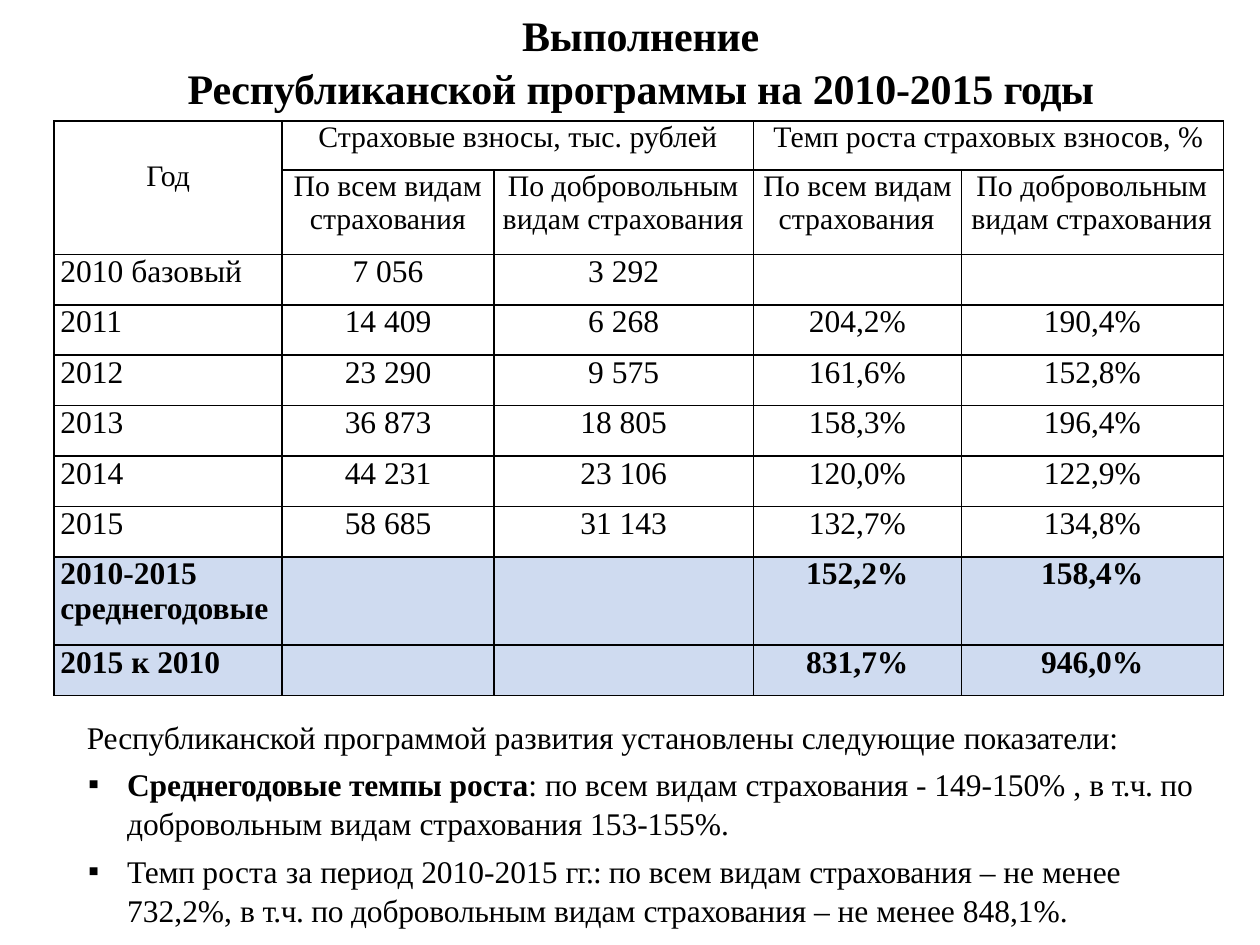
from dataclasses import dataclass

from lxml.etree import SubElement
from pptx import Presentation
from pptx.dml.color import RGBColor
from pptx.enum.text import MSO_ANCHOR, MSO_AUTO_SIZE, PP_ALIGN
from pptx.oxml.ns import qn
from pptx.util import Inches, Pt

BLACK = RGBColor(0, 0, 0)
WHITE = RGBColor(255, 255, 255)
PALE = RGBColor(0xCF, 0xDB, 0xF0)
FONT = "Times New Roman"


@dataclass
class Run:
    text: str
    space: float = 0
    bold: bool = False


@dataclass
class Line:
    runs: list[Run]
    size: float = 18
    align: PP_ALIGN = PP_ALIGN.LEFT
    left: float = 0
    first: float = 0
    before: float = 0
    pitch: float = 1
    mark: str = ""


def write(frame, lines: list[Line]) -> None:
    for place, line in enumerate(lines):
        para = frame.paragraphs[0] if place == 0 else frame.add_paragraph()
        para.alignment = line.align
        para.line_spacing = line.pitch
        para.space_before = Pt(line.before)
        props = para._p.get_or_add_pPr()
        props.set("marL", str(Inches(line.left)))
        props.set("indent", str(Inches(line.first)))
        if line.mark:
            SubElement(props, qn("a:buFont"), typeface=FONT)
            SubElement(props, qn("a:buChar"), char=line.mark)
        else:
            SubElement(props, qn("a:buNone"))
        for part in line.runs:
            run = para.add_run()
            run.text = part.text
            font = run.font
            font.name = FONT
            font.size = Pt(line.size)
            font.bold = part.bold
            font.color.rgb = BLACK
            if part.space:
                run._r.get_or_add_rPr().set("spc", str(round(part.space * 100)))


def clear(box) -> None:
    box.margin_left = box.margin_right = 0
    box.margin_top = box.margin_bottom = 0
    box.vertical_anchor = MSO_ANCHOR.TOP


def border(cell) -> None:
    props = cell._tc.get_or_add_tcPr()
    for place, side in enumerate(("lnL", "lnR", "lnT", "lnB")):
        edge = SubElement(props, qn("a:" + side), w=str(Pt(1)))
        fill = SubElement(edge, qn("a:solidFill"))
        SubElement(fill, qn("a:srgbClr"), val=str(BLACK))
        props.remove(edge)
        props.insert(place, edge)


def add_title(slide) -> None:
    title = slide.shapes.title
    title.left, title.top = Inches(1.44), Inches(0.05)
    title.width, title.height = Inches(7.29), Inches(0.81)
    frame = title.text_frame
    clear(frame)
    frame.auto_size = MSO_AUTO_SIZE.NONE
    heads = (
        [Run("Выполнение", -0.1, True)],
        [Run("Республиканской программы ", -0.1, True), Run("на ", 0, True),
         Run("2010-2015 ", -0.1, True), Run("годы", -0.3, True)],
    )
    write(frame, [Line(runs, 24, PP_ALIGN.CENTER, pitch=1.06) for runs in heads])


WIDTHS = (1.81, 1.68, 2.06, 1.65, 2.08)
HEIGHTS = (0.39, 0.67, *[0.4] * 6, 0.7, 0.4)
ALL = "По всем видам страхования"
FREE = "По добровольным видам страхования"
HEADS = ((ALL, 0.22, -0.13), (FREE, 0.07, 0.04), (ALL, 0.2, -0.12), (FREE, 0.08, 0.04))
ROWS = (
    ("2010 базовый", "7 056", "3 292", "", ""),
    ("2011", "14 409", "6 268", "204,2%", "190,4%"),
    ("2012", "23 290", "9 575", "161,6%", "152,8%"),
    ("2013", "36 873", "18 805", "158,3%", "196,4%"),
    ("2014", "44 231", "23 106", "120,0%", "122,9%"),
    ("2015", "58 685", "31 143", "132,7%", "134,8%"),
    ("2010-2015\nсреднегодовые", "", "", "152,2%", "158,4%"),
    ("2015 к 2010", "", "", "831,7%", "946,0%"),
)
TOTALS = 8


def add_grid(slide) -> None:
    grid = slide.shapes.add_table(
        len(HEIGHTS), len(WIDTHS), Inches(0.43), Inches(0.96),
        Inches(sum(WIDTHS)), Inches(sum(HEIGHTS))).table
    grid.first_row = grid.horz_banding = False
    for col, width in zip(grid.columns, WIDTHS):
        col.width = Inches(width)
    for row, height in zip(grid.rows, HEIGHTS):
        row.height = Inches(height)
    for row in range(len(HEIGHTS)):
        for col in range(len(WIDTHS)):
            cell = grid.cell(row, col)
            clear(cell)
            cell.fill.solid()
            cell.fill.fore_color.rgb = PALE if row >= TOTALS else WHITE
            border(cell)
    grid.cell(0, 0).merge(grid.cell(1, 0))
    grid.cell(0, 0).margin_top = Inches(0.31)
    tops = {0: "Год", 1: "Страховые взносы, тыс. рублей", 3: "Темп роста страховых взносов, %"}
    for col, text in tops.items():
        if col:
            grid.cell(0, col).merge(grid.cell(0, col + 1))
        write(grid.cell(0, col).text_frame, [Line([Run(text)], 17, PP_ALIGN.CENTER)])
    for col, (text, left, first) in enumerate(HEADS, 1):
        write(grid.cell(1, col).text_frame, [Line([Run(text)], 17, left=left, first=first)])
    for row, texts in enumerate(ROWS, 2):
        for col, text in enumerate(texts):
            if not text:
                continue
            align = PP_ALIGN.CENTER if col else PP_ALIGN.LEFT
            left = 0 if col else 0.05
            write(grid.cell(row, col).text_frame,
                  [Line([Run(part, bold=row >= TOTALS)], align=align, left=left)
                   for part in text.split("\n")])


def add_notes(slide) -> None:
    box = slide.shapes.add_textbox(Inches(0.68), Inches(5.68), Inches(8.87), Inches(1.63))
    frame = box.text_frame
    frame.word_wrap = True
    clear(frame)
    kinds = [Run("по ", -0.1), Run("всем видам "), Run("страхования ", -0.1)]
    part = [Run("в ", -0.1), Run("т.ч. ", -0.3), Run("по добровольным ", -0.1),
            Run("видам "), Run("страхования ", -0.1)]
    intro = [Run("Республиканской ", -0.1),
             Run("программой развития установлены следующие "), Run("показатели:", -0.1)]
    yearly = [Run("Среднегодовые темпы ", -0.1, True), Run("роста", 0, True), Run(": "),
              *kinds, Run("- 149-150% , "), *part, Run("153-155%.")]
    period = [Run("Темп ", -0.2), Run("роста ", 0.1), Run("за "), Run("период ", -0.1),
              Run("2010-2015 "), Run("гг.: ", -0.5), *kinds,
              Run("– не менее 732,2%, "), *part, Run("– не менее 848,1%.")]
    points = [Line(runs, left=0.33, first=-0.31, before=4.3, pitch=1.05, mark="▪")
              for runs in (yearly, period)]
    write(frame, [Line(intro, left=0.01, pitch=1.05), *points])


def main() -> None:
    deck = Presentation()
    deck.slide_width, deck.slide_height = Inches(10), Inches(7.5)
    slide = deck.slides.add_slide(deck.slide_layouts[5])
    add_title(slide)
    add_grid(slide)
    add_notes(slide)
    deck.save("out.pptx")


if __name__ == "__main__":
    main()
